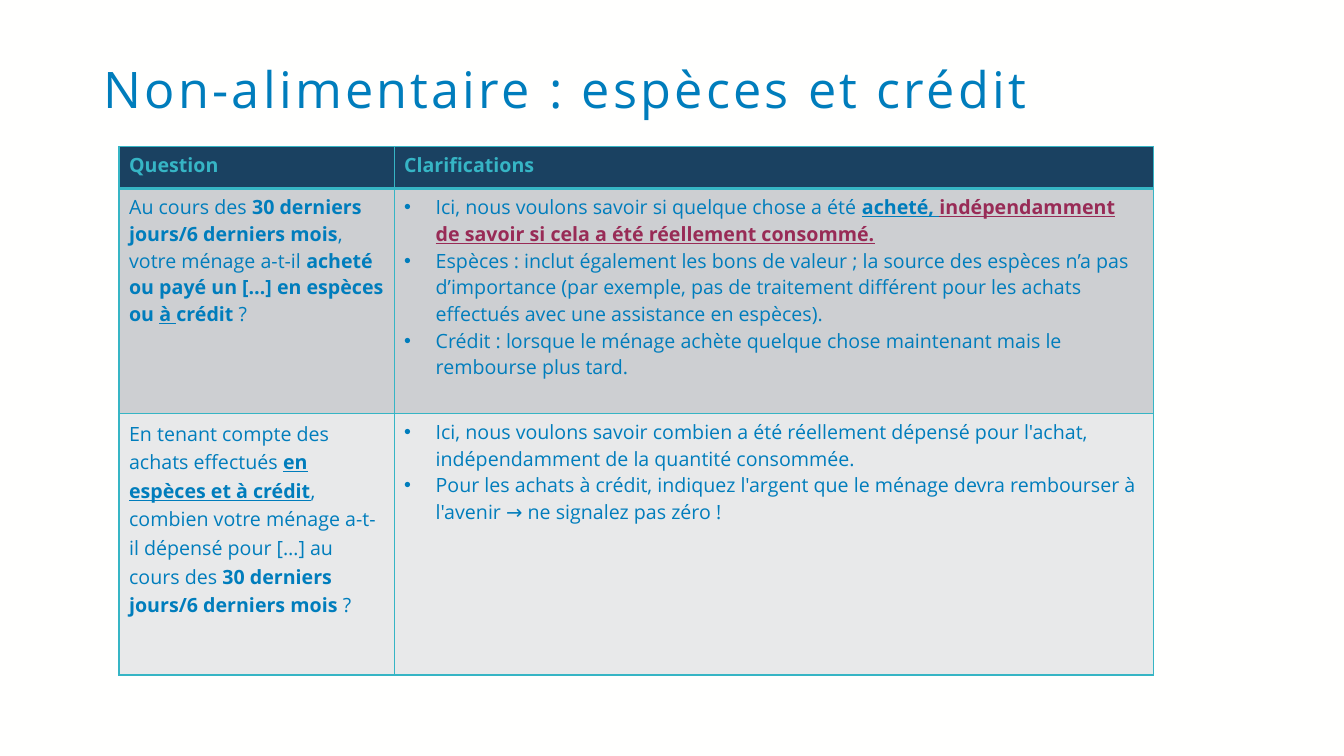
"""Build the slide on non-food purchases paid in cash or on credit."""
from lxml import etree
from pptx import Presentation
from pptx import util as u
from pptx.dml.color import RGBColor
from pptx.enum import text
from pptx.oxml.ns import qn

FONT = "Open Sans"
BLUE, TEAL, RED = "007DBC", "36B5C5", "982B56"
TITLE = "Non-alimentaire : espèces et crédit"
COLS = [196.5, 542.5]
ROWS = [
    {"height": 30, "fill": "1A4161", "top": 1, "bottom": 3, "spacing": None,
     "question": [("Question", "b", TEAL)],
     "bullets": False,
     "answers": [[("Clarifications", "b", TEAL)]]},
    {"height": 160.5, "fill": "CDCFD2", "top": 3, "bottom": 1, "spacing": None,
     "question": [
         ("Au cours des ", "", BLUE),
         ("30 derniers jours/6 derniers mois", "b", BLUE),
         (", votre ménage a-t-il ", "", BLUE),
         ("acheté ou payé un […] en espèces ou ", "b", BLUE),
         ("à ", "bu", BLUE),
         ("crédit ", "b", BLUE),
         ("?", "", BLUE)],
     "bullets": True,
     "answers": [
         [("Ici, nous voulons savoir si quelque chose a été ", "", BLUE),
          ("acheté, ", "bu", BLUE),
          ("indépendamment de savoir si cela a été réellement consommé.", "bu", RED)],
         [("Espèces : inclut également les bons de valeur ; la source des espèces "
           "n’a pas d’importance (par exemple, pas de traitement différent pour les "
           "achats effectués avec une assistance en espèces).", "", BLUE)],
         [("Crédit : lorsque le ménage achète quelque chose maintenant mais le "
           "rembourse plus tard.", "", BLUE)]]},
    {"height": 187, "fill": "E8E9EA", "top": 1, "bottom": 1, "spacing": 1.07,
     "question": [
         ("En tenant compte des achats effectués ", "", BLUE),
         ("en espèces et à crédit", "bu", BLUE),
         (", combien votre ménage a-t-il dépensé pour […] au cours des ", "", BLUE),
         ("30 derniers jours/6 derniers mois ", "b", BLUE),
         ("?", "", BLUE)],
     "bullets": True,
     "answers": [
         [("Ici, nous voulons savoir combien a été réellement dépensé pour l'achat, "
           "indépendamment de la quantité consommée.", "", BLUE)],
         [("Pour les achats à crédit, indiquez l'argent que le ménage devra "
           "rembourser à l'avenir → ne signalez pas zéro !", "", BLUE)]]},
]


def rgb(value):
    return RGBColor.from_string(value)


def style(r, size, color, flags=""):
    r.font.name, r.font.size = FONT, u.Pt(size)
    r.font.bold, r.font.underline = "b" in flags, "u" in flags
    r.font.color.rgb = rgb(color)


def add_bullet(p):
    pPr = p._p.get_or_add_pPr()
    pPr.set("marL", str(u.Pt(22.5)))
    pPr.set("indent", str(-u.Pt(22.5)))
    etree.SubElement(pPr, qn("a:buFont")).set("typeface", "Arial")
    etree.SubElement(pPr, qn("a:buChar")).set("char", "•")


def fill_cell(cell, row, paragraphs, bullets=False, spacing=None):
    tcPr = cell._tc.get_or_add_tcPr()
    for side, width in (("L", 1), ("R", 1), ("T", row["top"]), ("B", row["bottom"])):
        ln = etree.SubElement(tcPr, qn("a:ln" + side), w=str(u.Pt(width)))
        solid = etree.SubElement(ln, qn("a:solidFill"))
        etree.SubElement(solid, qn("a:srgbClr")).set("val", TEAL)
    cell.fill.solid()
    cell.fill.fore_color.rgb = rgb(row["fill"])
    tf = cell.text_frame
    for i, runs in enumerate(paragraphs):
        p = tf.add_paragraph() if i else tf.paragraphs[0]
        if bullets:
            add_bullet(p)
        if spacing:
            p.line_spacing, p.space_after = spacing, u.Pt(8)
        for words, flags, color in runs:
            r = p.add_run()
            r.text = words
            style(r, 14, color, flags)


def main():
    prs = Presentation()
    prs.slide_width, prs.slide_height = u.Pt(960), u.Pt(540)
    s = prs.slides.add_slide(prs.slide_layouts[6])
    s.background.fill.solid()
    s.background.fill.fore_color.rgb = rgb("FFFFFE")

    sp = s.shapes.add_textbox(u.Pt(67), u.Pt(43.2), u.Pt(830), u.Pt(90.7))
    tf = sp.text_frame
    tf.word_wrap, tf.vertical_anchor = True, text.MSO_ANCHOR.TOP
    p = tf.paragraphs[0]
    p.text, p.line_spacing = TITLE, 0.9
    r = p.runs[0]
    style(r, 36, BLUE)
    r.font._element.set("spc", "230")

    height = sum(row["height"] for row in ROWS)
    table = s.shapes.add_table(len(ROWS), len(COLS), u.Pt(85), u.Pt(104.7),
                               u.Pt(sum(COLS)), u.Pt(height)).table
    for col, width in zip(table.columns, COLS):
        col.width = u.Pt(width)
    for i, row in enumerate(ROWS):
        table.rows[i].height = u.Pt(row["height"])
        fill_cell(table.cell(i, 0), row, [row["question"]], spacing=row["spacing"])
        fill_cell(table.cell(i, 1), row, row["answers"], bullets=row["bullets"])
    prs.save("out.pptx")


if __name__ == "__main__":
    main()
